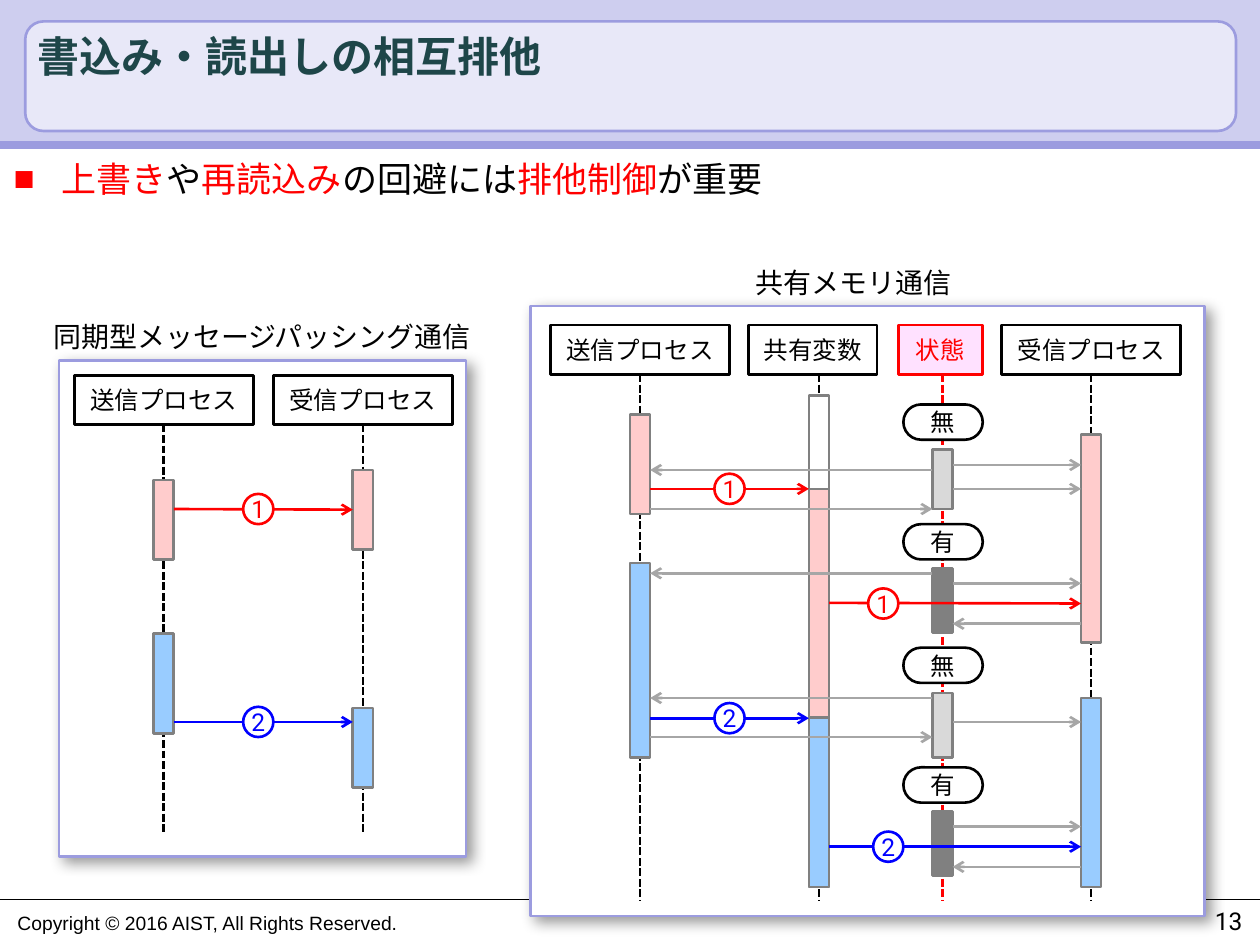
from dataclasses import dataclass

from lxml.etree import SubElement
from pptx import Presentation
from pptx.dml.color import RGBColor
from pptx.enum.dml import MSO_LINE
from pptx.enum.shapes import MSO_CONNECTOR, MSO_SHAPE
from pptx.enum.text import MSO_ANCHOR, PP_ALIGN
from pptx.oxml.ns import qn
from pptx.util import Inches, Pt


@dataclass(frozen=True)
class Theme:
    font: str = "Roboto"
    plain: str = "Arial"
    title: int = 24
    body: int = 20
    label: int = 16
    node: int = 14
    small: int = 11
    line: float = 1.5
    ink: str = "000000"
    deep: str = "1E4649"
    white: str = "FFFFFF"
    band: str = "CECEEF"
    pale: str = "E8E8F8"
    edge: str = "9C9CDF"
    red: str = "FF0000"
    blue: str = "0000FF"
    pink: str = "FFCCCC"
    sky: str = "99CCFF"
    rose: str = "FFE1FF"
    grey: str = "808080"
    light: str = "D9D9D9"
    mid: str = "A6A6A6"


T = Theme()
HALF = 0.08
SEND, RECV = 1.3, 2.88
WRITE, VALUE, STATE, READ = 5.08, 6.5, 7.48, 8.66


def style(para, size, color, font=T.font, bold=False):
    para.font.name = font
    para.font.size = Pt(size)
    para.font.bold = bold
    if color:
        para.font.color.rgb = RGBColor.from_string(color)


def add_text(slide, box, text, size, color=T.ink, font=T.font, bold=False,
             align=PP_ALIGN.LEFT, wrap=False, anchor=MSO_ANCHOR.TOP):
    frame = slide.shapes.add_textbox(*map(Inches, box)).text_frame
    frame.word_wrap = wrap
    frame.vertical_anchor = anchor
    para = frame.paragraphs[0]
    para.text = text
    para.alignment = align
    style(para, size, color, font, bold)


def add_body(slide, box, parts):
    frame = slide.shapes.add_textbox(*map(Inches, box)).text_frame
    frame.word_wrap = True
    para = frame.paragraphs[0]
    props = para._p.get_or_add_pPr()
    props.set("marL", str(Inches(0.38)))
    props.set("indent", str(-Inches(0.38)))
    tint = SubElement(props, qn("a:buClr"))
    SubElement(tint, qn("a:srgbClr"), val=T.red)
    SubElement(props, qn("a:buFont"), typeface=T.plain)
    SubElement(props, qn("a:buChar"), char="■")
    style(para, T.body, None)
    for text, color in parts:
        run = para.add_run()
        run.text = text
        run.font.color.rgb = RGBColor.from_string(color)


def add_box(slide, kind, box, fill, line=None, text="", color=T.ink, bend=None):
    shape = slide.shapes.add_shape(kind, *map(Inches, box))
    shape.shadow.inherit = False
    shape.fill.solid()
    shape.fill.fore_color.rgb = RGBColor.from_string(fill)
    if line:
        shape.line.color.rgb = RGBColor.from_string(line)
        shape.line.width = Pt(T.line)
    else:
        shape.line.fill.background()
    if bend is not None:
        shape.adjustments[0] = bend
    if text:
        frame = shape.text_frame
        frame.word_wrap = False
        frame.vertical_anchor = MSO_ANCHOR.MIDDLE
        frame.margin_left = frame.margin_right = 0
        frame.margin_top = frame.margin_bottom = 0
        para = frame.paragraphs[0]
        para.text = text
        para.alignment = PP_ALIGN.CENTER
        style(para, T.node, color)
    return shape


def add_panel(slide, box):
    panel = add_box(slide, MSO_SHAPE.RECTANGLE, box, T.white, T.edge)
    glow = SubElement(panel._element.spPr.find(qn("a:effectLst")), qn("a:outerShdw"),
                      blurRad=str(Pt(8)), dist=str(Pt(4)), dir="2700000",
                      algn="tl", rotWithShape="0")
    tint = SubElement(glow, qn("a:srgbClr"), val=T.ink)
    SubElement(tint, qn("a:alpha"), val="40000")


def add_line(slide, start, end, color, width=T.line):
    line = slide.shapes.add_connector(MSO_CONNECTOR.STRAIGHT, *map(Inches, start + end))
    line.line.color.rgb = RGBColor.from_string(color)
    line.line.width = Pt(width)
    SubElement(line._element.spPr, qn("a:effectLst"))
    return line


def add_lane(slide, text, left, top, width, lane, foot, color=T.ink, fill=T.white):
    head = add_box(slide, MSO_SHAPE.ROUNDED_RECTANGLE, (left, top, width, 0.39),
                   fill, color, text, color, 0)
    line = add_line(slide, (lane, top + 0.39), (lane, foot), color)
    line.line.dash_style = MSO_LINE.SQUARE_DOT
    if abs(left + width / 2 - lane) < 0.01:
        line.begin_connect(head, 2)


def add_bar(slide, lane, top, height, fill):
    return add_box(slide, MSO_SHAPE.RECTANGLE, (lane - HALF, top, 2 * HALF, height),
                   fill, T.grey)


def add_arrow(slide, source, target, y, color=T.mid):
    gap = HALF if target > source else -HALF
    line = add_line(slide, (source + gap, y), (target - gap, y), color)
    SubElement(line.line._get_or_add_ln(), qn("a:tailEnd"), type="arrow")
    return line


def add_send(slide, source, target, y, mark, x):
    color = T.red if mark == "1" else T.blue
    line = add_arrow(slide, source, target, y, color)
    add_box(slide, MSO_SHAPE.OVAL, (x - 0.12, y - 0.12, 0.24, 0.24),
            T.white, color, mark, color)
    return line


def add_frame(slide):
    add_line(slide, (0, 7.14), (10, 7.14), T.ink, 0.75)
    add_text(slide, (0.04, 7.18, 3.36, 0.29),
             "Copyright © 2016 AIST, All Rights Reserved.", T.small, font=T.plain)
    add_box(slide, MSO_SHAPE.RECTANGLE, (0, 0, 10, 1.15), T.band)
    add_box(slide, MSO_SHAPE.ROUNDED_RECTANGLE, (0.2, 0.17, 9.61, 0.87), T.pale, T.edge)
    add_line(slide, (0, 1.15), (10, 1.15), T.edge, 4.5)
    add_text(slide, (0.2, 0.21, 9.61, 0.47), "書込み・読出しの相互排他", T.title, T.deep,
             bold=True, wrap=True, anchor=MSO_ANCHOR.MIDDLE)
    add_text(slide, (7.63, 7.14, 2.33, 0.31), "13", T.node,
             align=PP_ALIGN.RIGHT, wrap=True)


def add_passing(slide):
    add_text(slide, (0.33, 2.49, 3.57, 0.37), "同期型メッセージパッシング通信", T.label)
    add_panel(slide, (0.47, 2.86, 3.23, 3.94))
    for text, lane in (("送信プロセス", SEND), ("受信プロセス", RECV)):
        add_lane(slide, text, lane - 0.71, 2.98, 1.42, lane, 6.6)
    add_bar(slide, SEND, 3.81, 0.63, T.pink)
    goal = add_bar(slide, RECV, 3.73, 0.63, T.pink)
    add_bar(slide, SEND, 5.03, 0.79, T.sky)
    add_bar(slide, RECV, 5.62, 0.63, T.sky)
    add_send(slide, SEND, RECV, 4.04, "1", 2.05).end_connect(goal, 1)
    add_send(slide, SEND, RECV, 5.73, "2", 2.05)


def add_shared(slide):
    add_text(slide, (5.9, 2.06, 1.77, 0.37), "共有メモリ通信", T.label)
    add_panel(slide, (4.21, 2.43, 5.35, 4.84))
    add_lane(slide, "送信プロセス", 4.37, 2.58, 1.42, WRITE, 7.15)
    add_lane(slide, "共有変数", 5.94, 2.58, 1.02, VALUE, 7.15)
    add_lane(slide, "状態", 7.13, 2.58, 0.67, STATE, 7.15, T.red, T.rose)
    add_lane(slide, "受信プロセス", 7.95, 2.58, 1.42, READ, 7.15)
    add_bar(slide, VALUE, 3.14, 3.9, T.white)
    held = add_bar(slide, VALUE, 3.88, 1.81, T.pink)
    for lane, top, height, fill in (
            (VALUE, 5.7, 1.34, T.sky),
            (WRITE, 3.29, 0.79, T.pink), (WRITE, 4.47, 1.54, T.sky),
            (READ, 3.45, 1.65, T.pink), (READ, 5.54, 1.5, T.sky),
            (STATE, 3.57, 0.47, T.light), (STATE, 4.51, 0.51, T.grey),
            (STATE, 5.5, 0.51, T.light), (STATE, 6.44, 0.51, T.grey)):
        add_bar(slide, lane, top, height, fill)
    for text, top in (("無", 3.21), ("有", 4.16), ("無", 5.14), ("有", 6.09)):
        add_box(slide, MSO_SHAPE.ROUNDED_RECTANGLE, (7.17, top, 0.63, 0.28),
                T.white, T.ink, text, bend=0.5)
    for source, target, rows in (
            (STATE, READ, (3.69, 3.88, 4.63, 5.73, 6.56)),
            (READ, STATE, (4.95, 6.88)),
            (STATE, WRITE, (3.73, 4.55, 5.54)),
            (WRITE, STATE, (4.04, 5.85))):
        for y in rows:
            add_arrow(slide, source, target, y)
    add_send(slide, WRITE, VALUE, 3.88, "1", 5.79)
    add_send(slide, VALUE, READ, 4.79, "1", 7.01).begin_connect(held, 3)
    add_send(slide, WRITE, VALUE, 5.7, "2", 5.79)
    add_send(slide, VALUE, READ, 6.72, "2", 7.05)


def main():
    deck = Presentation()
    deck.slide_width, deck.slide_height = Inches(10), Inches(7.5)
    slide = deck.slides.add_slide(deck.slide_layouts[6])
    add_frame(slide)
    add_body(slide, (0.01, 1.2, 9.65, 0.67), (
        ("上書き", T.red), ("や", T.ink), ("再読込み", T.red),
        ("の回避には", T.ink), ("排他制御", T.red), ("が重要", T.ink)))
    add_passing(slide)
    add_shared(slide)
    deck.save("out.pptx")


if __name__ == "__main__":
    main()
